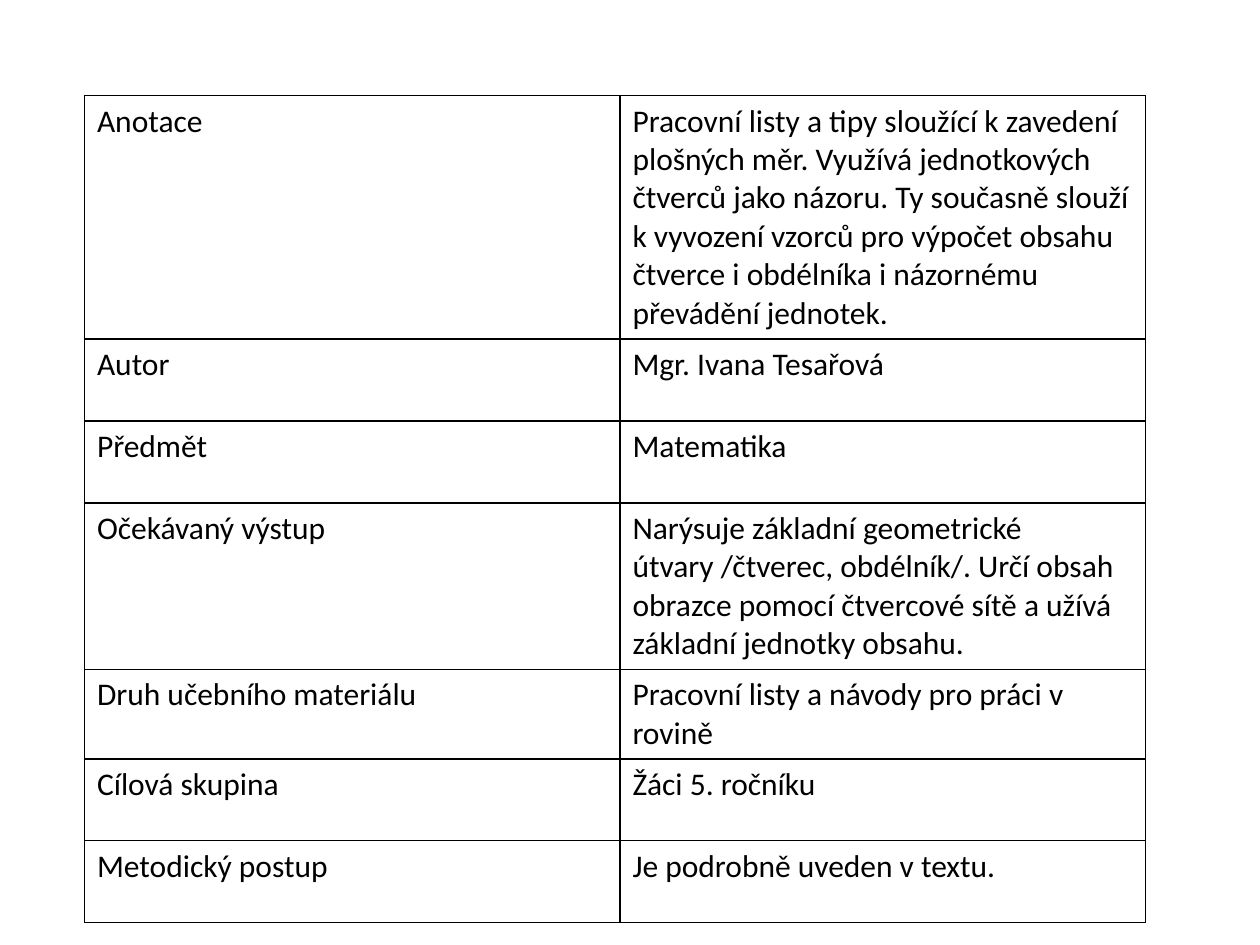
from lxml import etree
from pptx import Presentation
from pptx.dml.color import RGBColor
from pptx.oxml import ns
from pptx.util import Pt

BLACK = RGBColor(0, 0, 0)
FONT = "Calibri"
COLS = (306, 300.24)
FIRST, REST = 39, 46.8  # least row heights; long text makes a row taller
ROWS = (
    ("Anotace",
     "Pracovní listy a tipy sloužící k zavedení plošných měr. "
     "Využívá jednotkových čtverců jako názoru. Ty současně slouží "
     "k vyvození vzorců pro výpočet obsahu čtverce i obdélníka "
     "i názornému převádění jednotek."),
    ("Autor", "Mgr. Ivana Tesařová"),
    ("Předmět", "Matematika"),
    ("Očekávaný výstup",
     "Narýsuje základní geometrické útvary /čtverec, obdélník/. "
     "Určí obsah obrazce pomocí čtvercové sítě a užívá základní "
     "jednotky obsahu."),
    ("Druh učebního materiálu", "Pracovní listy a návody pro práci v rovině"),
    ("Cílová skupina", "Žáci 5. ročníku"),
    ("Metodický postup", "Je podrobně uveden v textu."),
)


def add_border(cell, color, width):
    props = cell._tc.get_or_add_tcPr()
    for side in ("lnL", "lnR", "lnT", "lnB"):
        line = etree.SubElement(props, ns.qn("a:" + side), w=str(Pt(width)))
        fill = etree.SubElement(line, ns.qn("a:solidFill"))
        etree.SubElement(fill, ns.qn("a:srgbClr"), val=str(color))


def fill_cell(cell, words):
    cell.text = words
    font = cell.text_frame.paragraphs[0].font
    font.name, font.size, font.bold = FONT, Pt(18), False
    font.color.rgb = BLACK
    add_border(cell, BLACK, 1)
    cell.fill.background()


def add_info(slide, left, top):
    """Place the table of lesson details with its corner at left, top."""
    high = FIRST + REST * (len(ROWS) - 1)
    frame = slide.shapes.add_table(
        len(ROWS), len(COLS), Pt(left), Pt(top), Pt(sum(COLS)), Pt(high))
    table = frame.table
    table.first_row = table.horz_banding = False
    for col, width in zip(table.columns, COLS):
        col.width = Pt(width)
    for i, (row, pair) in enumerate(zip(table.rows, ROWS)):
        row.height = Pt(REST if i else FIRST)
        for cell, words in zip(row.cells, pair):
            fill_cell(cell, words)


def main():
    deck = Presentation()
    deck.slide_width, deck.slide_height = Pt(720), Pt(540)
    slide = deck.slides.add_slide(deck.slide_layouts[6])
    add_info(slide, 48.24, 54.72)
    deck.save("out.pptx")


if __name__ == "__main__":
    main()
